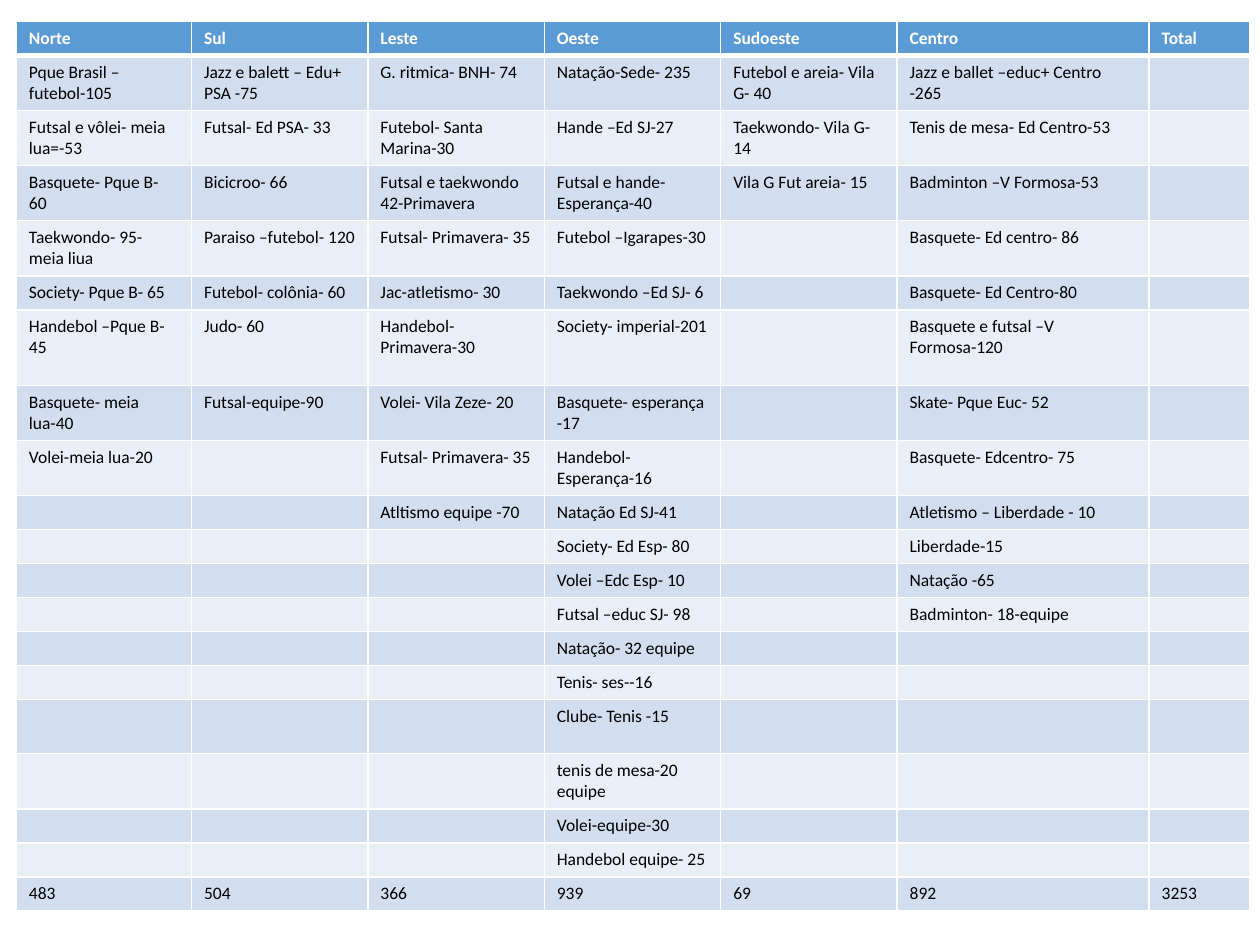
from dataclasses import dataclass

from lxml import etree
from pptx import Presentation
from pptx.dml.color import RGBColor
from pptx.oxml.ns import qn
from pptx.table import _Cell
from pptx.util import Inches, Pt

WIDE, HIGH = Inches(10), Inches(7.5)
BLANK = 6
COLORS = {"head": "5B9BD5", "odd": "D2DEEF", "even": "EAEFF7",
          "line": "FFFFFF", "light": "FFFFFF", "dark": "000000"}
FONT, SIZE = "Calibri", Pt(10)
ONE, TWO, THREE = 0.27, 0.43, 0.6
TALL = {1: TWO, 2: TWO, 3: TWO, 4: TWO, 6: THREE, 7: TWO, 8: TWO, 15: TWO, 16: TWO}
COUNT = 20


@dataclass
class Zone:
    name: str
    width: float
    total: str
    items: tuple[str, ...] = ()

    def texts(self) -> list[str]:
        gap = COUNT - 2 - len(self.items)
        return [self.name, *self.items, *[""] * gap, self.total]


ZONES = [
    Zone("Norte", 1.39, "483", (
        "Pque Brasil – futebol-105", "Futsal e vôlei- meia lua=-53",
        "Basquete- Pque B- 60", "Taekwondo- 95- meia liua",
        "Society- Pque B- 65", "Handebol –Pque B- 45",
        "Basquete- meia lua-40", "Volei-meia lua-20")),
    Zone("Sul", 1.4, "504", (
        "Jazz e balett – Edu+ PSA -75", "Futsal- Ed PSA- 33", "Bicicroo- 66",
        "Paraiso –futebol- 120", "Futebol- colônia- 60", "Judo- 60",
        "Futsal-equipe-90")),
    Zone("Leste", 1.4, "366", (
        "G. ritmica- BNH- 74", "Futebol- Santa Marina-30",
        "Futsal e taekwondo 42-Primavera", "Futsal- Primavera- 35",
        "Jac-atletismo- 30", "Handebol-Primavera-30", "Volei- Vila Zeze- 20",
        "Futsal- Primavera- 35", "Atltismo equipe -70")),
    Zone("Oeste", 1.4, "939", (
        "Natação-Sede- 235", "Hande –Ed SJ-27", "Futsal e hande- Esperança-40",
        "Futebol –Igarapes-30", "Taekwondo –Ed SJ- 6", "Society- imperial-201",
        "Basquete- esperança -17", "Handebol- Esperança-16", "Natação Ed SJ-41",
        "Society- Ed Esp- 80", "Volei –Edc Esp- 10", "Futsal –educ SJ- 98",
        "Natação- 32 equipe", "Tenis- ses--16", "Clube- Tenis -15",
        "tenis de mesa-20 equipe", "Volei-equipe-30", "Handebol equipe- 25")),
    Zone("Sudoeste", 1.4, "69", (
        "Futebol e areia- Vila G- 40", "Taekwondo- Vila G- 14",
        "Vila G Fut areia- 15")),
    Zone("Centro", 2, "892", (
        "Jazz e ballet –educ+ Centro -265", "Tenis de mesa- Ed Centro-53",
        "Badminton –V Formosa-53", "Basquete- Ed centro- 86",
        "Basquete- Ed Centro-80", "Basquete e futsal –V Formosa-120",
        "Skate- Pque Euc- 52", "Basquete- Edcentro- 75",
        "Atletismo – Liberdade - 10", "Liberdade-15", "Natação -65",
        "Badminton- 18-equipe")),
    Zone("Total", 0.8, "3253"),
]


def border(cell: _Cell, side: str, width: float) -> None:
    line = etree.Element(qn(f"a:{side}"), w=str(Pt(width)))
    fill = etree.SubElement(line, qn("a:solidFill"))
    etree.SubElement(fill, qn("a:srgbClr"), val=COLORS["line"])
    cell._tc.get_or_add_tcPr().append(line)


def draw_cell(cell: _Cell, text: str, row: int) -> None:
    head = row == 0
    for side in ("lnL", "lnR", "lnT", "lnB"):
        thick = (head and side == "lnB") or (row == 1 and side == "lnT")
        border(cell, side, 3 if thick else 1)
    tone = "head" if head else "odd" if row % 2 else "even"
    cell.fill.solid()
    cell.fill.fore_color.rgb = RGBColor.from_string(COLORS[tone])
    cell.text = text
    para = cell.text_frame.paragraphs[0]
    font = para.font
    font.name, font.size, font.bold = FONT, SIZE, head
    font.color.rgb = RGBColor.from_string(COLORS["light" if head else "dark"])
    if not text:
        etree.SubElement(para._p, qn("a:endParaRPr"), sz=str(SIZE.centipoints))


def main() -> None:
    deck = Presentation()
    deck.slide_width, deck.slide_height = WIDE, HIGH
    slide = deck.slides.add_slide(deck.slide_layouts[BLANK])
    tall = [Inches(TALL.get(row, ONE)) for row in range(COUNT)]
    wide = [Inches(zone.width) for zone in ZONES]
    table = slide.shapes.add_table(
        COUNT, len(ZONES), Inches(0.13), Inches(0.17), sum(wide), sum(tall)).table
    for row, size in zip(table.rows, tall):
        row.height = size
    for col, zone in enumerate(ZONES):
        table.columns[col].width = wide[col]
        for row, text in enumerate(zone.texts()):
            draw_cell(table.cell(row, col), text, row)
    deck.save("out.pptx")


if __name__ == "__main__":
    main()
